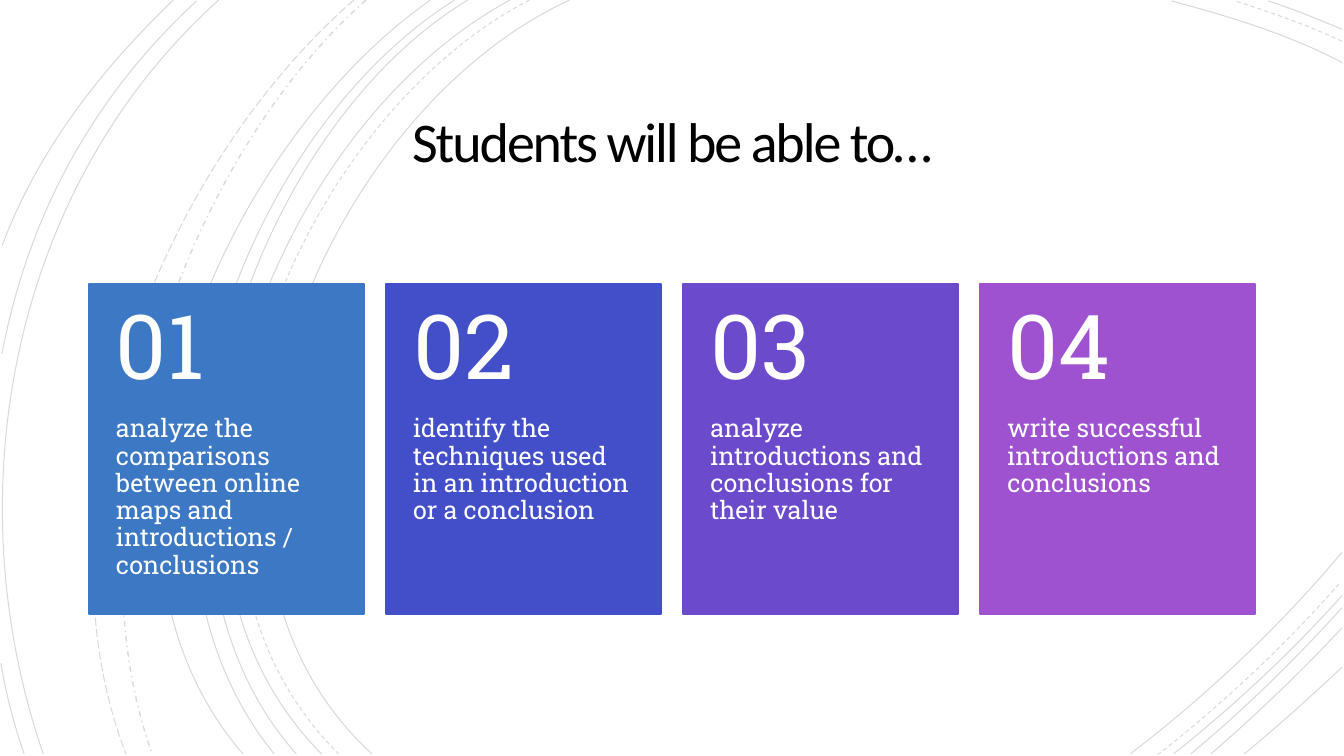
from pptx import Presentation
from pptx.dml.color import RGBColor
from pptx.enum.dml import MSO_LINE
from pptx.enum.shapes import MSO_SHAPE
from pptx.enum.text import MSO_ANCHOR, PP_ALIGN
from pptx.oxml.ns import qn
from pptx.util import Inches, Pt
from lxml.etree import SubElement

# Start, two control points and end of each arc, in inches
SOLID_ARCS = [
    [(5.65, 0), (3.15, 1.15), (1.43, 5.4), (3.69, 7.48)],
    [(13.31, 0.62), (12.78, 0.34), (12.18, 0.16), (11.62, 0.01)],
    [(11.21, 7.48), (11.97, 6.9), (12.69, 6.22), (13.31, 5.48)],
    [(5.06, 0), (2.7, 1.27), (1.1, 5.37), (3.19, 7.48)],
    [(13.31, 0.29), (13.07, 0.19), (12.83, 0.09), (12.58, 0.01)],
    [(11.64, 7.48), (12.23, 7.01), (12.8, 6.48), (13.31, 5.91)],
    [(4.64, 0), (2.44, 1.33), (1.1, 5.41), (2.94, 7.48)],
    [(11.81, 7.48), (12.34, 7.04), (12.84, 6.55), (13.31, 6.03)],
    [(4.51, 0), (2.31, 1.38), (0.97, 5.33), (2.72, 7.48)],
    [(12.01, 7.48), (12.46, 7.09), (12.9, 6.67), (13.31, 6.23)],
    [(4.27, 0), (2.17, 1.47), (0.53, 5.29), (2.41, 7.48)],
    [(12.34, 7.48), (12.67, 7.21), (12.99, 6.92), (13.31, 6.62)],
    [(2.17, 0), (0.11, 1.85), (-0.46, 4.9), (0.43, 7.48)],
    [(1.95, 0.01), (0.92, 0.96), (0.28, 2.14), (0.02, 3.51)],
    [(0.01, 6.58), (0.06, 6.89), (0.14, 7.19), (0.24, 7.48)],
    [(1.72, 0), (1, 0.69), (0.37, 1.5), (0.02, 2.44)],
]
DASHED_ARCS = [
    [(5.25, 0), (2.85, 1.25), (1.23, 5.37), (3.36, 7.48)],
    [(13.31, 0.41), (12.97, 0.25), (12.6, 0.12), (12.25, 0.01)],
    [(11.48, 7.49), (12.13, 6.98), (12.75, 6.4), (13.3, 5.77)],
]
DASH_DOT_ARC = [(3.63, 0), (1.76, 1.66), (0.65, 5.09), (1.51, 7.48)]
LONG_DASH_ARC = [(3.51, 0), (1.57, 1.69), (0.29, 4.99), (1.25, 7.48)]

GOALS = [
    ("3C78C3", "analyze the comparisons between online maps and introductions / conclusions"),
    ("434FC8", "identify the techniques used in an introduction or a conclusion"),
    ("6C4ACC", "analyze introductions and conclusions for their value"),
    ("9F52D0", "write successful introductions and conclusions"),
]


def color(hex_string):
    return RGBColor.from_string(hex_string)


def add_arc(slide, points, dash=MSO_LINE.SOLID, width=0.75):
    """Draw one faint cubic curve through a start, two control points and an end."""
    start, *others = [(Inches(x), Inches(y)) for x, y in points]
    builder = slide.shapes.build_freeform(*start)
    builder.add_line_segments(others, close=False)
    shape = builder.convert_to_shape()
    shape.shadow.inherit = False
    shape.fill.background()
    shape.line.color.rgb = color("000000")
    shape.line.width = Pt(width)
    shape.line.dash_style = dash
    line_color = next(shape.line._ln.iter(qn("a:srgbClr")))
    SubElement(line_color, qn("a:alpha"), val="15000")
    segments = list(shape._element.iter(qn("a:lnTo")))
    curve = SubElement(segments[0].getparent(), qn("a:cubicBezTo"))
    for segment in segments:
        curve.append(segment[0])
        segment.getparent().remove(segment)


def add_background_arcs(slide):
    for points in SOLID_ARCS:
        add_arc(slide, points)
    for points in DASHED_ARCS:
        add_arc(slide, points, MSO_LINE.DASH)
    add_arc(slide, DASH_DOT_ARC, MSO_LINE.DASH_DOT, 1)
    add_arc(slide, LONG_DASH_ARC, MSO_LINE.LONG_DASH)


def add_text(slide, box, text, size, font, hex_color, insets, spacing,
             anchor=MSO_ANCHOR.MIDDLE, align=PP_ALIGN.LEFT):
    frame = slide.shapes.add_textbox(*map(Inches, box)).text_frame
    frame.word_wrap = True
    frame.vertical_anchor = anchor
    (frame.margin_left, frame.margin_top,
     frame.margin_right, frame.margin_bottom) = map(Inches, insets)
    paragraph = frame.paragraphs[0]
    paragraph.alignment = align
    paragraph.line_spacing = spacing
    run = paragraph.add_run()
    run.text = text
    run.font.size = Pt(size)
    run.font.name = font
    run.font.color.rgb = color(hex_color)
    return run


def add_title(slide, box):
    run = add_text(slide, box, "Students will be able to…", 40, "Calibri", "000000",
                   (0.25, 0.25, 0.25, 0.25), 0.85, align=PP_ALIGN.CENTER)
    run.font._element.set("spc", "-150")


def add_goal_card(slide, box, number, goal, hex_color):
    left, top, width, height = box
    number_height = height * 0.4
    card = slide.shapes.add_shape(MSO_SHAPE.RECTANGLE, *map(Inches, box))
    card.shadow.inherit = False
    card.fill.solid()
    card.fill.fore_color.rgb = color(hex_color)
    card.line.color.rgb = color(hex_color)
    card.line.width = Pt(1.25)
    add_text(slide, (left, top + number_height, width, height - number_height), goal,
             18, "Roboto Slab", "FFFFFF", (0.27, 0, 0.27, 0.36), 0.9, MSO_ANCHOR.TOP)
    add_text(slide, (left, top, width, number_height), f"{number:02d}",
             64, "Roboto Slab", "FFFFFF", (0.27, 0.18, 0.27, 0.18), 0.9)


def add_goal_cards(slide, box, gap=0.22):
    """Share the width of the box equally between the goal cards."""
    left, top, width, height = box
    card_width = (width - gap * (len(GOALS) - 1)) / len(GOALS)
    for index, (hex_color, goal) in enumerate(GOALS):
        card_left = left + index * (card_width + gap)
        add_goal_card(slide, (card_left, top, card_width, height), index + 1, goal, hex_color)


def main():
    presentation = Presentation()
    presentation.slide_width = Inches(13.33)
    presentation.slide_height = Inches(7.5)
    slide = presentation.slides.add_slide(presentation.slide_layouts[6])
    slide.background.fill.solid()
    slide.background.fill.fore_color.rgb = color("FFFFFF")
    add_background_arcs(slide)
    add_title(slide, (1.92, 0.87, 9.49, 1.15))
    add_goal_cards(slide, (0.88, 2.82, 11.57, 3.27))
    presentation.save("out.pptx")


if __name__ == "__main__":
    main()
